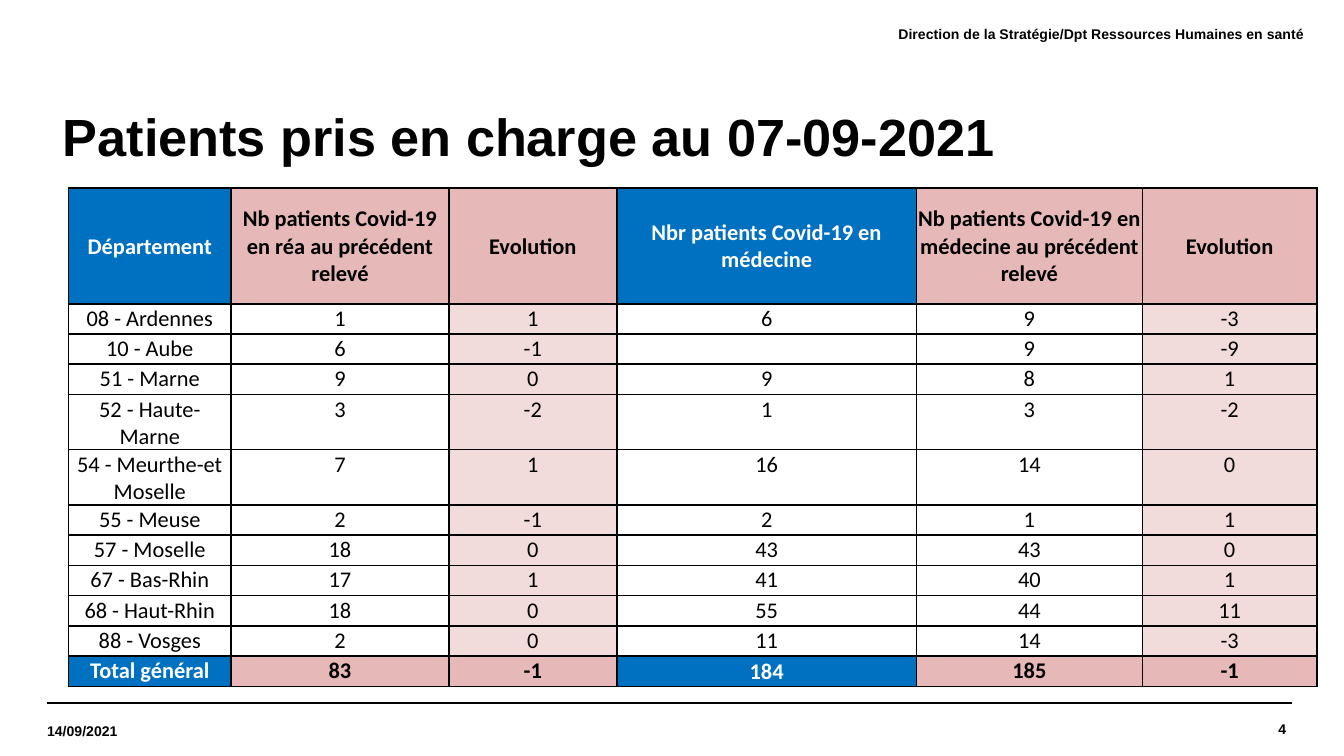
"""Build the slide of Covid-19 patients in care by department."""
from lxml import etree
from pptx import Presentation
from pptx.dml.color import RGBColor
from pptx.enum.shapes import MSO_CONNECTOR
from pptx.enum.text import MSO_ANCHOR, PP_ALIGN
from pptx.oxml.ns import qn
from pptx.util import Inches, Pt

WIDTH = 10
HEIGHT = WIDTH * 9 / 16
BLACK, WHITE, BLUE, ROSE, PALE_ROSE = "000000", "FFFFFF", "0070C0", "E6B8B7", "F2DCDB"

TITLE = "Patients pris en charge au 07-09-2021"
DIVISION = "Direction de la Stratégie/Dpt Ressources Humaines en santé"
DATE, PAGE = "14/09/2021", "4"
ROWS = [
    ("Département", "Nb patients Covid-19 en réa au précédent relevé", "Evolution",
     "Nbr patients Covid-19 en médecine",
     "Nb patients Covid-19 en médecine au précédent relevé", "Evolution"),
    ("08 - Ardennes", 1, 1, 6, 9, -3),
    ("10 - Aube", 6, -1, "", 9, -9),
    ("51 - Marne", 9, 0, 9, 8, 1),
    ("52 - Haute-Marne", 3, -2, 1, 3, -2),
    ("54 - Meurthe-et Moselle", 7, 1, 16, 14, 0),
    ("55 - Meuse", 2, -1, 2, 1, 1),
    ("57 - Moselle", 18, 0, 43, 43, 0),
    ("67 - Bas-Rhin", 17, 1, 41, 40, 1),
    ("68 - Haut-Rhin", 18, 0, 55, 44, 11),
    ("88 - Vosges", 2, 0, 11, 14, -3),
    ("Total général", 83, -1, 184, 185, -1),
]
COLUMN_WIDTHS = [1.21, 1.62, 1.25, 2.23, 1.68, 1.3]
TABLE_HEIGHT, HEADER_HEIGHT, DOUBLE_HEIGHT = 3.71, 0.86, 0.41
SINGLE_HEIGHT = (TABLE_HEIGHT - HEADER_HEIGHT - 2 * DOUBLE_HEIGHT) / 9
ROW_HEIGHTS = ([HEADER_HEIGHT] + [SINGLE_HEIGHT] * 3
               + [DOUBLE_HEIGHT] * 2 + [SINGLE_HEIGHT] * 6)
BLUE_COLUMNS, EVOLUTION_COLUMNS = (0, 3), (2, 5)
RULE_Y, RULE_STARTS, RULE_LENGTH = 5.23, (0.35, 0.39), 9.22


def rgb(value):
    """Turn a hex string into a colour."""
    return RGBColor.from_string(value)


def style(paragraph, size, name, color, bold, align):
    """Set the alignment and font of a paragraph."""
    paragraph.alignment = align
    font = paragraph.font
    font.size, font.name, font.bold = Pt(size), name, bold
    font.color.rgb = rgb(color)


def add_text(slide, text, box, size=7.5, align=PP_ALIGN.LEFT,
             anchor=MSO_ANCHOR.TOP, margins=None):
    """Add one bold black Arial line in a box and return its paragraph."""
    frame = slide.shapes.add_textbox(*map(Inches, box)).text_frame
    frame.word_wrap, frame.vertical_anchor = True, anchor
    if margins is not None:
        frame.margin_left = frame.margin_right = Inches(margins)
        frame.margin_top = frame.margin_bottom = Inches(margins)
    paragraph = frame.paragraphs[0]
    paragraph.text = text
    style(paragraph, size, "Arial", BLACK, True, align)
    return paragraph


def add_borders(cell):
    """Draw a thin black line on each side of a cell."""
    properties = cell._tc.get_or_add_tcPr()
    for side in ("lnL", "lnR", "lnT", "lnB"):
        line = etree.SubElement(properties, qn(f"a:{side}"), w=str(Pt(1)))
        fill = etree.SubElement(line, qn("a:solidFill"))
        etree.SubElement(fill, qn("a:srgbClr"), val=BLACK)


def fill_cell(cell, value, row, column):
    """Write and colour a cell according to its place in the table."""
    header, total = row == 0, row == len(ROWS) - 1
    strong, blue = header or total, column in BLUE_COLUMNS
    add_borders(cell)
    if strong:
        background = BLUE if blue else ROSE
    else:
        background = PALE_ROSE if column in EVOLUTION_COLUMNS else None
    if background:
        cell.fill.solid()
        cell.fill.fore_color.rgb = rgb(background)
    else:
        cell.fill.background()
    cell.margin_left = cell.margin_right = cell.margin_top = Inches(0.01)
    cell.margin_bottom = 0
    middle = header or (total and column == 3)
    cell.vertical_anchor = MSO_ANCHOR.MIDDLE if middle else MSO_ANCHOR.TOP
    paragraph = cell.text_frame.paragraphs[0]
    if value != "":
        paragraph.text = str(value)
    style(paragraph, 12, "Calibri", WHITE if strong and blue else BLACK, strong, PP_ALIGN.CENTER)
    if value == "":
        etree.SubElement(paragraph._p, qn("a:endParaRPr"), sz="1200")


def add_patients(slide):
    """Add the table of patients."""
    area = map(Inches, (0.51, 1.4, sum(COLUMN_WIDTHS), TABLE_HEIGHT))
    table = slide.shapes.add_table(len(ROWS), len(COLUMN_WIDTHS), *area).table
    table.first_row = table.horz_banding = False
    for column, width in zip(table.columns, COLUMN_WIDTHS):
        column.width = Inches(width)
    for row, height in zip(table.rows, ROW_HEIGHTS):
        row.height = Inches(height)
    for r, values in enumerate(ROWS):
        for c, value in enumerate(values):
            fill_cell(table.cell(r, c), value, r, c)


def add_rule(slide, start):
    """Add a horizontal footer rule."""
    rule = slide.shapes.add_connector(
        MSO_CONNECTOR.STRAIGHT, *map(Inches, (start, RULE_Y, start + RULE_LENGTH, RULE_Y)))
    rule.line.color.rgb, rule.line.width = rgb(BLACK), Pt(0.8)
    etree.SubElement(rule._element.spPr, qn("a:effectLst"))


def main():
    """Build and save the presentation."""
    deck = Presentation()
    deck.slide_width, deck.slide_height = Inches(WIDTH), Inches(HEIGHT)
    slide = deck.slides.add_slide(deck.slide_layouts[6])
    for start in RULE_STARTS:
        add_rule(slide, start)
    footer = {"anchor": MSO_ANCHOR.MIDDLE, "margins": 0}
    add_text(slide, PAGE, (8.09, 5.23, 1.48, 0.39), align=PP_ALIGN.RIGHT, **footer)
    add_text(slide, DATE, (0.35, 5.25, 1.28, 0.38), **footer)
    title = add_text(slide, TITLE, (0.37, 0.78, 9.19, 0.59), size=28)
    title.line_spacing = 0.9
    add_text(slide, DIVISION, (4.8, 0.14, 5, 0.24), align=PP_ALIGN.RIGHT)
    add_patients(slide)
    deck.save("out.pptx")


if __name__ == "__main__":
    main()
